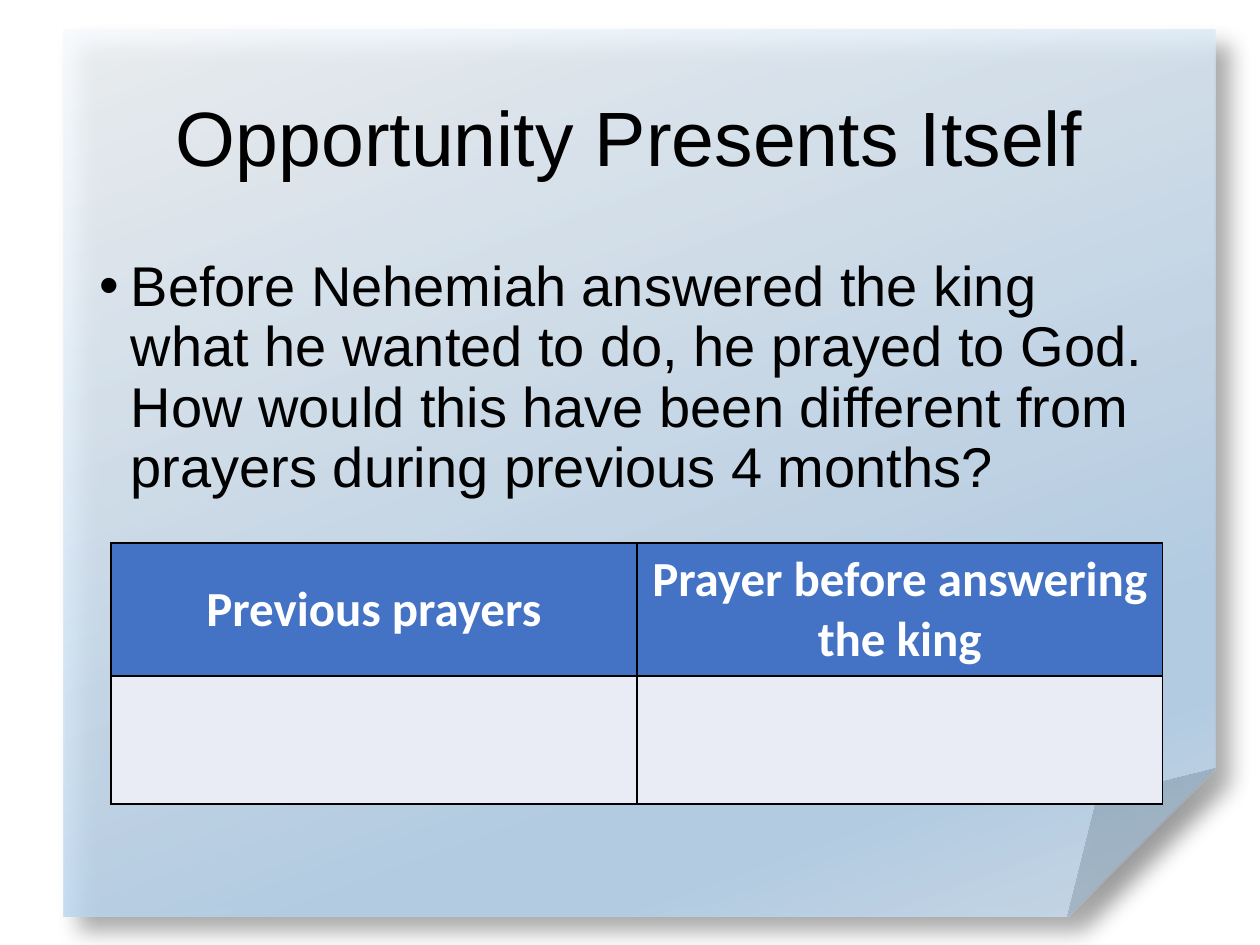
from lxml.etree import SubElement
from pptx import Presentation
from pptx.dml.color import RGBColor
from pptx.enum.shapes import MSO_SHAPE
from pptx.enum.text import MSO_ANCHOR, MSO_AUTO_SIZE, PP_ALIGN
from pptx.oxml import parse_xml
from pptx.oxml.ns import nsdecls, qn
from pptx.util import Pt


def color(hex_string):
    return RGBColor.from_string(hex_string)


def add_run(paragraph, text, size, font, hex_string, bold=False):
    run = paragraph.add_run()
    run.text = text
    run.font.size = Pt(size)
    run.font.name = font
    run.font.bold = bold
    run.font.color.rgb = color(hex_string)


prs = Presentation()
prs.slide_width, prs.slide_height = Pt(720), Pt(540)
slide = prs.slides.add_slide(prs.slide_layouts[1])
slide.background.fill.solid()
slide.background.fill.fore_color.rgb = color("FFFFFF")

# Folded paper behind everything, with a translucent gradient and a shadow
paper = slide.shapes.add_shape(MSO_SHAPE.FOLDED_CORNER, Pt(36.4), Pt(17), Pt(658), Pt(506.5))
paper.line.fill.background()
paper_stops = [(0, "F7FAFD"), (74, "B5D2EC"), (83, "B5D2EC"), (100, "CEE1F2")]
stops_xml = "".join(
    f'<a:gs pos="{pos * 1000}"><a:srgbClr val="{stop}"><a:alpha val="83000"/></a:srgbClr></a:gs>'
    for pos, stop in paper_stops)
gradient = parse_xml(
    f'<a:gradFill {nsdecls("a")} rotWithShape="1"><a:gsLst>{stops_xml}</a:gsLst>'
    f'<a:lin ang="{70 * 60000}" scaled="0"/></a:gradFill>')
shadow = parse_xml(
    f'<a:effectLst {nsdecls("a")}><a:outerShdw blurRad="{Pt(13)}" dist="{Pt(13)}" '
    f'dir="{45 * 60000}" algn="tl" rotWithShape="0"><a:srgbClr val="000000">'
    '<a:alpha val="40000"/></a:srgbClr></a:outerShdw></a:effectLst>')
paper_line = paper.line._get_or_add_ln()
paper_line.addprevious(gradient)
paper_line.addnext(shadow)
slide.shapes._spTree.insert(2, paper._element)

# Title
title = slide.shapes.title
title.left, title.top, title.width, title.height = Pt(49.5), Pt(28.75), Pt(621), Pt(104.4)
title.text_frame.auto_size = MSO_AUTO_SIZE.NONE
title.text_frame.vertical_anchor = MSO_ANCHOR.MIDDLE
heading = title.text_frame.paragraphs[0]
heading.alignment = PP_ALIGN.CENTER
heading.line_spacing = 0.9
add_run(heading, "Opportunity Presents Itself", 44, "Arial", "000000")

# Question
body = slide.placeholders[1]
body.left, body.top, body.width, body.height = Pt(49.5), Pt(143.75), Pt(621), Pt(342.6)
body.text_frame.auto_size = MSO_AUTO_SIZE.NONE
question = body.text_frame.paragraphs[0]
question.line_spacing = 0.9
question.space_before = Pt(0)
bullet_props = question._p.get_or_add_pPr()
bullet_props.set("marL", str(Pt(18)))
bullet_props.set("indent", str(Pt(-18)))
SubElement(bullet_props, qn("a:buFont")).set("typeface", "Arial")
SubElement(bullet_props, qn("a:buChar")).set("char", "•")
add_run(question, "Before Nehemiah answered the king what he wanted to do, he prayed to God. "
        "How would this have been different from prayers during previous 4 months?",
        32, "Arial", "000000")

# Comparison table: headings over empty answer cells
rows = [(76, "4472C4", ["Previous prayers", "Prayer before answering the king"]),
        (73, "E9EBF5", ["", ""])]
prayers = slide.shapes.add_table(2, 2, Pt(63.4), Pt(310.4), Pt(601), Pt(149)).table
for column in prayers.columns:
    column.width = Pt(300.5)
for row_index, (height, fill, texts) in enumerate(rows):
    prayers.rows[row_index].height = Pt(height)
    for column_index, text in enumerate(texts):
        cell = prayers.cell(row_index, column_index)
        cell.vertical_anchor = MSO_ANCHOR.MIDDLE
        cell_props = cell._tc.get_or_add_tcPr()
        for side in ("lnL", "lnR", "lnT", "lnB"):
            cell_props.append(parse_xml(
                f'<a:{side} {nsdecls("a")} w="{Pt(1)}"><a:solidFill>'
                f'<a:srgbClr val="000000"/></a:solidFill></a:{side}>'))
        cell.fill.solid()
        cell.fill.fore_color.rgb = color(fill)
        if text:
            label = cell.text_frame.paragraphs[0]
            label.alignment = PP_ALIGN.CENTER
            add_run(label, text, 28, "Calibri", "FFFFFF", bold=True)

prs.save("out.pptx")
